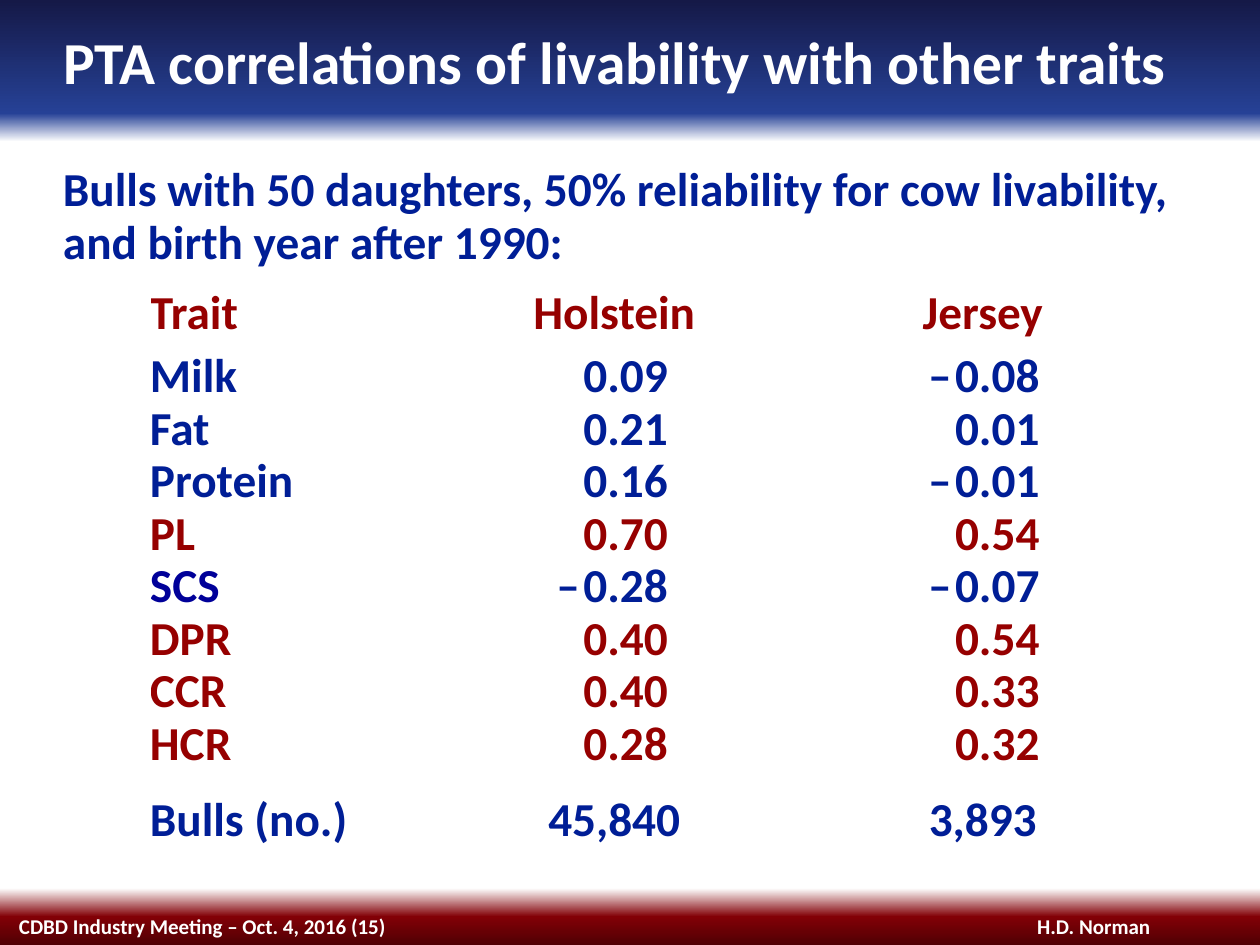
from lxml import etree
from pptx import Presentation
from pptx.dml.color import RGBColor
from pptx.enum.text import MSO_ANCHOR, PP_ALIGN
from pptx.oxml.ns import qn
from pptx.util import Inches, Pt

LEFT, CENTER, RIGHT = PP_ALIGN.LEFT, PP_ALIGN.CENTER, PP_ALIGN.RIGHT
TOP, MIDDLE, BOTTOM = MSO_ANCHOR.TOP, MSO_ANCHOR.MIDDLE, MSO_ANCHOR.BOTTOM
WHITE = RGBColor(0xFF, 0xFF, 0xFF)
BLUE = RGBColor(0x00, 0x1E, 0x96)
NAVY = RGBColor(0x00, 0x00, 0x99)
RED = RGBColor(0x96, 0x00, 0x00)
BACKGROUND = [(0, RGBColor(0x15, 0x19, 0x47)), (12, RGBColor(0x26, 0x41, 0x96)),
              (15, WHITE), (94, WHITE),
              (97, RGBColor(0x82, 0x00, 0x06)), (100, RGBColor(0x50, 0x00, 0x04))]

TITLE = "PTA correlations of livability with other traits"
INTRO = ("Bulls with 50 daughters, 50% reliability for cow livability, "
         "and birth year after 1990:")
FOOTERS = [("CDBD Industry Meeting – Oct. 4, 2016 (15)", 0.15, 5.22, LEFT),
           ("H.D. Norman", 6.52, 2.61, RIGHT)]
HEADER = ("Trait", "Holstein", "Jersey")
TRAITS = [("Milk", "0.09", "–0.08"), ("Fat", "0.21", "0.01"),
          ("Protein", "0.16", "–0.01"), ("PL", "0.70", "0.54"),
          ("SCS", "–0.28", "–0.07"), ("DPR", "0.40", "0.54"),
          ("CCR", "0.40", "0.33"), ("HCR", "0.28", "0.32")]
TOTALS = ("Bulls (no.)", "45,840", "3,893")
HIGHLIGHTED = {"Trait", "PL", "DPR", "CCR", "HCR"}
COLUMNS = (1.76, 3.85, 2)
NUMBER_INSETS = (0, 1.5, 0.55)
HEADER_HEIGHT, ROW_HEIGHT, TOTAL_HEIGHT = 0.5, 0.4, 0.6


def clear_margins(box, right=0):
    box.margin_left = box.margin_top = box.margin_bottom = 0
    box.margin_right = Inches(right)


def format_paragraph(p, size, color, align=LEFT, line=None):
    p.alignment = align
    if line:
        p.line_spacing = Pt(line)
    for r in p.runs:
        r.font.name = "Calibri"
        r.font.size = Pt(size)
        r.font.bold = True
        r.font.color.rgb = color


def write(s, text, size, color, align=LEFT, line=None, anchor=TOP):
    tf = s.text_frame
    tf.text = text
    tf.word_wrap = True
    tf.vertical_anchor = anchor
    clear_margins(tf)
    format_paragraph(tf.paragraphs[0], size, color, align, line)


def paint_background(slide):
    fill = slide.background.fill
    fill.gradient()
    fill.gradient_angle = 270
    stops = slide._element.find(".//" + qn("a:gsLst"))
    for stop in list(stops):
        stops.remove(stop)
    for percent, color in BACKGROUND:
        stop = etree.SubElement(stops, qn("a:gs"), pos=str(percent * 1000))
        etree.SubElement(stop, qn("a:srgbClr"), val=str(color))


def fill_cell(cell, text, color, align, inset, anchor):
    cell.fill.background()
    cell.vertical_anchor = anchor
    clear_margins(cell, inset)
    p = cell.text_frame.paragraphs[0]
    if text.startswith("–"):
        sign = p.add_run()
        sign.text = "–"
        sign.font._element.set("spc", "200")
        text = text[1:]
    p.add_run().text = text
    format_paragraph(p, 27, color, align, 30)


def add_traits(slide):
    rows = [HEADER, *TRAITS, TOTALS]
    heights = [HEADER_HEIGHT] + [ROW_HEIGHT] * len(TRAITS) + [TOTAL_HEIGHT]
    table = slide.shapes.add_table(
        len(rows), len(COLUMNS), Inches(1.19), Inches(2.3),
        Inches(sum(COLUMNS)), Inches(sum(heights))).table
    table.first_row = table.horz_banding = False
    for column, width in zip(table.columns, COLUMNS):
        column.width = Inches(width)
    for i, (row, height) in enumerate(zip(rows, heights)):
        table.rows[i].height = Inches(height)
        is_trait = row in TRAITS
        color = RED if row[0] in HIGHLIGHTED else BLUE
        for j, text in enumerate(row):
            align = LEFT if j == 0 else RIGHT if is_trait else CENTER
            fill_cell(table.cell(i, j), text, NAVY if text == "SCS" else color,
                      align, NUMBER_INSETS[j] if is_trait else 0,
                      BOTTOM if row is TOTALS else TOP)


def main():
    prs = Presentation()
    prs.slide_width, prs.slide_height = Inches(10), Inches(7.5)
    slide = prs.slides.add_slide(prs.slide_layouts[5])
    paint_background(slide)

    title = slide.shapes.title
    title.left, title.top = Inches(0.5), Inches(0.2)
    title.width, title.height = Inches(9), Inches(0.64)
    write(title, TITLE, 34, WHITE)

    for text, left, width, align in FOOTERS:
        s = slide.shapes.add_textbox(Inches(left), Inches(7.25), Inches(width), Inches(0.2))
        write(s, text, 12, WHITE, align, anchor=MIDDLE)

    add_traits(slide)
    s = slide.shapes.add_textbox(Inches(0.5), Inches(1.3), Inches(9), Inches(0.84))
    write(s, INTRO, 27, BLUE, line=30)

    prs.save("out.pptx")


if __name__ == "__main__":
    main()
